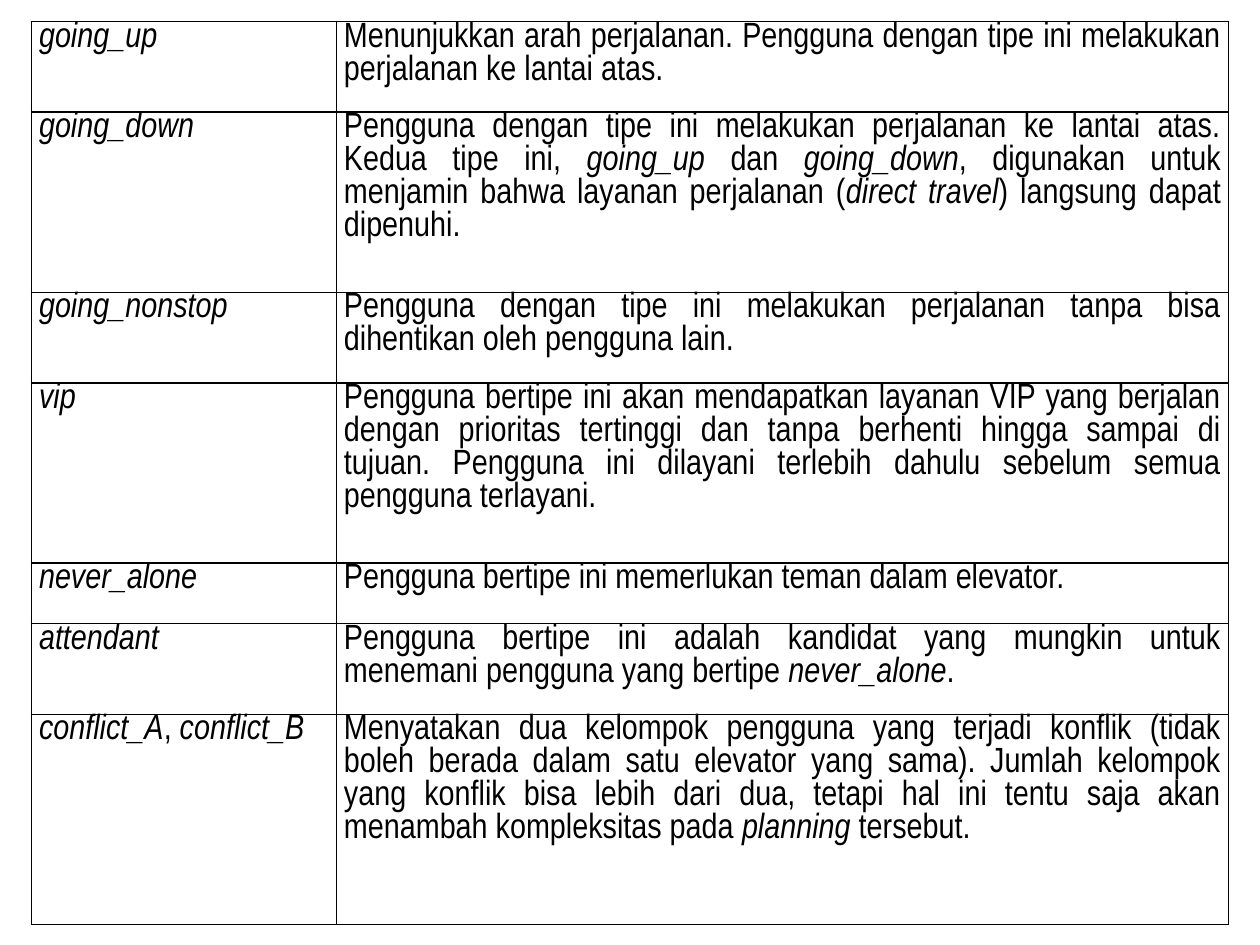
from dataclasses import dataclass

from lxml import etree
from pptx import Presentation
from pptx.dml.color import RGBColor
from pptx.enum.text import PP_ALIGN
from pptx.oxml.ns import qn
from pptx.util import Inches, Pt

JUSTIFY = PP_ALIGN.JUSTIFY
BLANK_LAYOUT = 6


@dataclass(frozen=True)
class Theme:
    ink: str = "000000"
    paper: str = "FFFFFF"
    font: str = "Arial Narrow"
    text_size: float = 20
    border_width: float = 1


COLUMN_WIDTHS = (2.42, 7.08)

# Row height, user type, description; asterisks enclose italic text.
USER_TYPES = [
    (0.72, "*going_up*",
     "Menunjukkan arah perjalanan. Pengguna dengan tipe ini melakukan "
     "perjalanan ke lantai atas."),
    (1.43, "*going_down*",
     "Pengguna dengan tipe ini melakukan perjalanan ke lantai atas. Kedua "
     "tipe ini, *going_up *dan *going_down*, digunakan untuk menjamin bahwa "
     "layanan perjalanan (*direct travel*) langsung dapat dipenuhi."),
    (0.72, "*going_nonstop*",
     "Pengguna dengan tipe ini melakukan perjalanan tanpa bisa dihentikan "
     "oleh pengguna lain."),
    (1.43, "*vip*",
     "Pengguna bertipe ini akan mendapatkan layanan VIP yang berjalan dengan "
     "prioritas tertinggi dan tanpa berhenti hingga sampai di tujuan. Pengguna "
     "ini dilayani terlebih dahulu sebelum semua pengguna terlayani."),
    (0.48, "*never_alone*",
     "Pengguna bertipe ini memerlukan teman dalam elevator."),
    (0.72, "*attendant*",
     "Pengguna bertipe ini adalah kandidat yang mungkin untuk menemani "
     "pengguna yang bertipe *never_alone*."),
    (1.67, "*conflict_A*, *conflict_B*",
     "Menyatakan dua kelompok pengguna yang terjadi konflik (tidak boleh "
     "berada dalam satu elevator yang sama). Jumlah kelompok yang konflik bisa "
     "lebih dari dua, tetapi hal ini tentu saja akan menambah kompleksitas "
     "pada *planning *tersebut."),
]


class SlideBuilder:
    def __init__(self, slide, theme):
        self.slide = slide
        self.theme = theme

    def add_table(self, left, top, widths, rows):
        heights = [height for height, *_ in rows]
        table = self.slide.shapes.add_table(
            len(rows), len(widths), Inches(left), Inches(top),
            Inches(sum(widths)), Inches(sum(heights))).table
        table.first_row = table.horz_banding = False
        for column, width in zip(table.columns, widths):
            column.width = Inches(width)
        for row, (height, *texts) in zip(table.rows, rows):
            row.height = Inches(height)
            for cell, text in zip(row.cells, texts):
                self.format_cell(cell)
                self.write_text(cell.text_frame.paragraphs[0], text)

    def format_cell(self, cell):
        margins = {"margin_left": 0.06, "margin_right": 0.06,
                   "margin_top": 0, "margin_bottom": 0}
        for name, value in margins.items():
            setattr(cell, name, Inches(value))
        self.add_borders(cell)
        cell.fill.solid()
        cell.fill.fore_color.rgb = RGBColor.from_string(self.theme.paper)

    def add_borders(self, cell):
        properties = cell._tc.get_or_add_tcPr()
        for side in ("a:lnL", "a:lnR", "a:lnT", "a:lnB"):
            line = etree.SubElement(properties, qn(side),
                                    w=str(Pt(self.theme.border_width)))
            fill = etree.SubElement(line, qn("a:solidFill"))
            etree.SubElement(fill, qn("a:srgbClr"), val=self.theme.ink)

    def write_text(self, paragraph, marked_text):
        """Write runs, switching italics at each asterisk."""
        paragraph.alignment = JUSTIFY
        for index, part in enumerate(marked_text.split("*")):
            if not part:
                continue
            run = paragraph.add_run()
            run.text = part
            style = {"name": self.theme.font, "size": Pt(self.theme.text_size),
                     "italic": index % 2 == 1}
            for name, value in style.items():
                setattr(run.font, name, value)
            run.font.color.rgb = RGBColor.from_string(self.theme.ink)


def main():
    presentation = Presentation()
    presentation.slide_width = Inches(10)
    presentation.slide_height = Inches(7.5)
    slide = presentation.slides.add_slide(
        presentation.slide_layouts[BLANK_LAYOUT])
    SlideBuilder(slide, Theme()).add_table(0.25, 0.17, COLUMN_WIDTHS, USER_TYPES)
    presentation.save("out.pptx")


if __name__ == "__main__":
    main()
